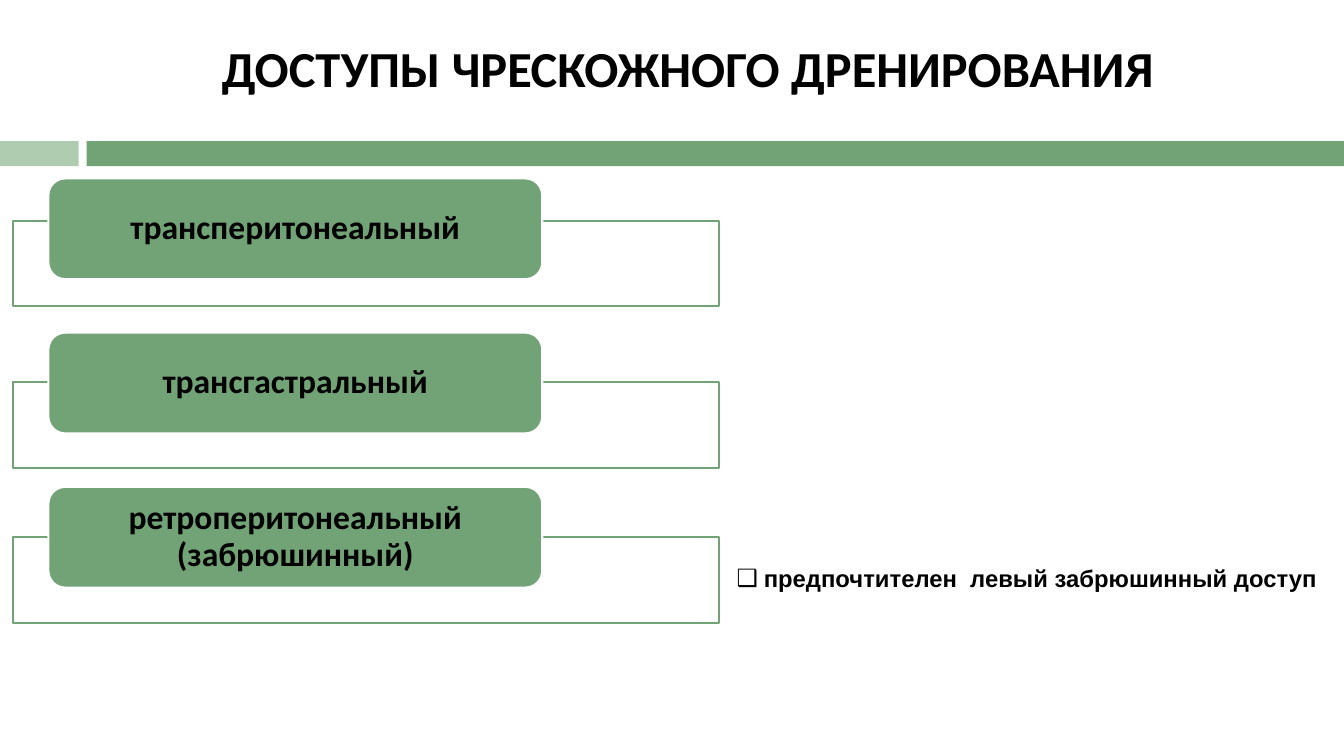
from pptx import Presentation
from pptx.dml.color import RGBColor
from pptx.enum.shapes import MSO_SHAPE as Shape
from pptx.enum.text import MSO_ANCHOR as Anchor, PP_ALIGN as Align
from pptx.oxml.ns import qn
from pptx.util import Inches, Pt
from lxml.etree import SubElement

WIDTH, HEIGHT = Inches(13.333), Inches(7.5)
COLORS = {"green": "72A376", "pale": "B0CCB0", "white": "FFFFFF", "black": "000000"}

# Label and top of its frame, in percent of the slide height
APPROACHES = [
    ("трансперитонеальный", 29.2),
    ("трансгастральный", 50.53),
    ("ретроперитонеальный (забрюшинный)", 71.07),
]
PILL_TOP, PILL_STEP = 23.6, 20.4


def color(name):
    return RGBColor.from_string(COLORS[name])


def area(left, top, width, height):
    """Turn percentages of the slide's size into lengths."""
    return (int(WIDTH * left / 100), int(HEIGHT * top / 100),
            int(WIDTH * width / 100), int(HEIGHT * height / 100))


def add_block(slide, kind, box, fill, line=None):
    shape = slide.shapes.add_shape(kind, *area(*box))
    shape.shadow.inherit = False
    shape.fill.solid()
    shape.fill.fore_color.rgb = color(fill)
    if line:
        shape.line.color.rgb = color(line)
        shape.line.width = Pt(1.5)
    else:
        shape.line.fill.background()
    return shape


def write(shape, text, size, font_name, align=Align.CENTER):
    frame = shape.text_frame
    frame.word_wrap = True
    frame.vertical_anchor = Anchor.MIDDLE
    paragraph = frame.paragraphs[0]
    paragraph.text = text
    paragraph.alignment = align
    font = paragraph.font
    font.name, font.size, font.bold = font_name, Pt(size), True
    font.color.rgb = color("black")
    return paragraph


def add_approach(slide, label, frame_top, pill_top):
    add_block(slide, Shape.RECTANGLE, (0.98, frame_top, 52.5, 11.33), "white", "green")
    pill = add_block(slide, Shape.ROUNDED_RECTANGLE, (3.6, pill_top, 36.75, 13.33),
                     "green", "white")
    text_frame = pill.text_frame
    text_frame.margin_left = text_frame.margin_right = Inches(0.24)
    text_frame.margin_top = text_frame.margin_bottom = 0
    write(pill, label, 24, "Calibri").line_spacing = 0.9


def add_note(slide, text):
    note = slide.shapes.add_textbox(*area(54.07, 74, 45.9, 4.93))
    # The bullet must precede the font settings in the paragraph properties
    properties = note.text_frame.paragraphs[0]._p.get_or_add_pPr()
    properties.set("marL", str(Inches(0.27)))
    properties.set("indent", str(-Inches(0.27)))
    SubElement(properties, qn("a:buFont")).set("typeface", "Arial")
    SubElement(properties, qn("a:buChar")).set("char", "❑")
    write(note, text, 17, "Arial", Align.LEFT)


def main():
    presentation = Presentation()
    presentation.slide_width, presentation.slide_height = WIDTH, HEIGHT
    slide = presentation.slides.add_slide(presentation.slide_layouts[6])

    add_block(slide, Shape.RECTANGLE, (0, 18.67, 5.85, 3.33), "pale")
    add_block(slide, Shape.RECTANGLE, (6.45, 18.67, 93.55, 3.33), "green")
    title = slide.shapes.add_textbox(*area(6.6, 1.73, 89.18, 14.4))
    write(title, "ДОСТУПЫ ЧРЕСКОЖНОГО ДРЕНИРОВАНИЯ", 36, "Calibri")

    add_note(slide, "предпочтителен  левый забрюшинный доступ")
    for index, (label, frame_top) in enumerate(APPROACHES):
        add_approach(slide, label, frame_top, PILL_TOP + index * PILL_STEP)

    presentation.save("out.pptx")


if __name__ == "__main__":
    main()
